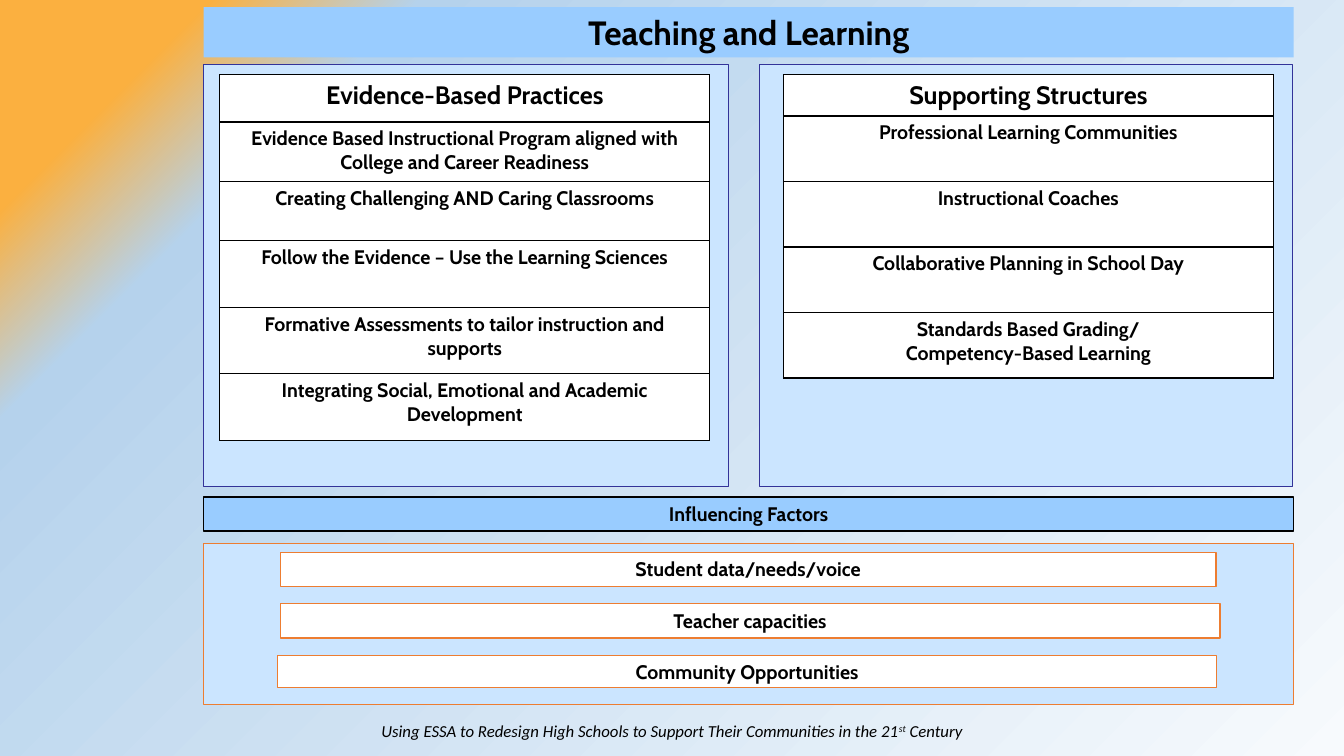
from dataclasses import dataclass

from lxml import etree
from pptx import Presentation
from pptx import util as u
from pptx.dml.color import RGBColor
from pptx.enum import shapes, text
from pptx.oxml import parse_xml
from pptx.oxml.ns import nsdecls, qn

PX = 9144
PANEL, BAND, WHITE, BLACK = "CBE5FF", "99CCFF", "FFFFFF", "000000"
NAVY, ORANGE = "333399", "ED7D31"
BACKDROP = [(0, "F7FAFD"), (80, "B5D2EC"), (90, "FBB040"), (100, "FBB040")]
TOP, MIDDLE = text.MSO_ANCHOR.TOP, text.MSO_ANCHOR.MIDDLE


@dataclass
class Box:
    left: int
    top: int
    width: int
    height: int
    fill: str
    line: str = ""
    weight: float = 0.75
    label: str = ""
    size: int = 14
    anchor: text.MSO_ANCHOR = TOP


@dataclass
class Listing:
    left: int
    top: int
    width: int
    heights: list[int]
    entries: list[str]


PANELS = [
    Box(753, 64, 529, 419, PANEL, NAVY),
    Box(202, 64, 521, 419, PANEL, NAVY),
    Box(202, 7, 1081, 50, BAND, label="Teaching and Learning", size=24),
]

LISTINGS = [
    Listing(218, 74, 486, [47, 59, 59, 66, 66, 66], [
        "Evidence-Based Practices",
        "Evidence Based Instructional Program aligned with College and Career Readiness",
        "Creating Challenging AND Caring Classrooms",
        "Follow the Evidence – Use the Learning Sciences",
        "Formative Assessments to tailor instruction and supports",
        "Integrating Social, Emotional and Academic Development",
    ]),
    Listing(777, 74, 486, [41] + [65] * 4, [
        "Supporting Structures",
        "Professional Learning Communities",
        "Instructional Coaches",
        "Collaborative Planning in School Day",
        "Standards Based Grading/\vCompetency-Based Learning",
    ]),
]

FACTORS = [
    Box(202, 539, 1081, 160, PANEL, ORANGE),
    Box(202, 493, 1081, 34, BAND, BLACK, 1, "Influencing Factors"),
    Box(278, 548, 928, 34, WHITE, ORANGE, 1, "Student data/needs/voice"),
    Box(278, 599, 932, 34, WHITE, ORANGE, 1, "Teacher capacities"),
    Box(275, 650, 932, 32, WHITE, ORANGE, 0.75, "Community Opportunities", anchor=MIDDLE),
]


def px(length: int) -> u.Emu:
    return u.Emu(length * PX)


def color(value: str) -> RGBColor:
    return RGBColor.from_string(value)


def style(para, size: int, name: str = "Cabin", bold: bool = True, italic: bool = False) -> None:
    para.alignment = text.PP_ALIGN.CENTER
    font = para.font
    font.name, font.size, font.bold, font.italic = name, u.Pt(size), bold, italic
    font.color.rgb = color(BLACK)


def paint_background(page) -> None:
    stops = "".join(
        f'<a:gs pos="{place * 1000}"><a:srgbClr val="{value}"/></a:gs>' for place, value in BACKDROP
    )
    page.element.cSld.insert(0, parse_xml(
        f'<p:bg {nsdecls("p", "a")}><p:bgPr><a:gradFill rotWithShape="1"><a:gsLst>{stops}</a:gsLst>'
        '<a:path path="circle"><a:fillToRect l="100000" t="100000"/></a:path>'
        "</a:gradFill><a:effectLst/></p:bgPr></p:bg>"
    ))


def draw_box(page, box: Box) -> None:
    shape = page.shapes.add_shape(
        shapes.MSO_SHAPE.RECTANGLE, px(box.left), px(box.top), px(box.width), px(box.height)
    )
    shape.shadow.inherit = False
    shape.fill.solid()
    shape.fill.fore_color.rgb = color(box.fill)
    if box.line:
        shape.line.color.rgb = color(box.line)
        shape.line.width = u.Pt(box.weight)
    else:
        shape.line.fill.background()
    if box.label:
        frame = shape.text_frame
        frame.word_wrap = True
        frame.vertical_anchor = box.anchor
        frame.text = box.label
        style(frame.paragraphs[0], box.size)


def border_cell(cell) -> None:
    properties = cell._tc.get_or_add_tcPr()
    for side in ("lnL", "lnR", "lnT", "lnB"):
        line = etree.SubElement(properties, qn(f"a:{side}"), w=str(u.Pt(1)))
        solid = etree.SubElement(line, qn("a:solidFill"))
        etree.SubElement(solid, qn("a:srgbClr"), val=BLACK)


def draw_listing(page, listing: Listing) -> None:
    table = page.shapes.add_table(
        len(listing.entries), 1, px(listing.left), px(listing.top),
        px(listing.width), px(sum(listing.heights)),
    ).table
    table.first_row = table.horz_banding = False
    for index, (height, entry) in enumerate(zip(listing.heights, listing.entries)):
        table.rows[index].height = px(height)
        cell = table.cell(index, 0)
        border_cell(cell)
        cell.fill.solid()
        cell.fill.fore_color.rgb = color(WHITE)
        cell.text_frame.text = entry
        style(cell.text_frame.paragraphs[0], 14 if index else 18)


def draw_footer(page) -> None:
    frame = page.shapes.add_textbox(0, px(710), px(1333), px(30)).text_frame
    frame.word_wrap = True
    para = frame.paragraphs[0]
    style(para, 12, "Calibri", bold=False, italic=True)
    pieces = [
        ("Using ESSA to Redesign High Schools to Support Their Communities in the 21", 0),
        ("st", 30000),
        (" Century", 0),
    ]
    for words, baseline in pieces:
        span = para.add_run()
        span.text = words
        if baseline:
            span._r.get_or_add_rPr().set("baseline", str(baseline))


def main() -> None:
    deck = Presentation()
    deck.slide_width, deck.slide_height = px(1333), px(750)
    page = deck.slides.add_slide(deck.slide_layouts[6])
    paint_background(page)
    draw_footer(page)
    for box in PANELS:
        draw_box(page, box)
    for listing in LISTINGS:
        draw_listing(page, listing)
    for box in FACTORS:
        draw_box(page, box)
    deck.save("out.pptx")


if __name__ == "__main__":
    main()
